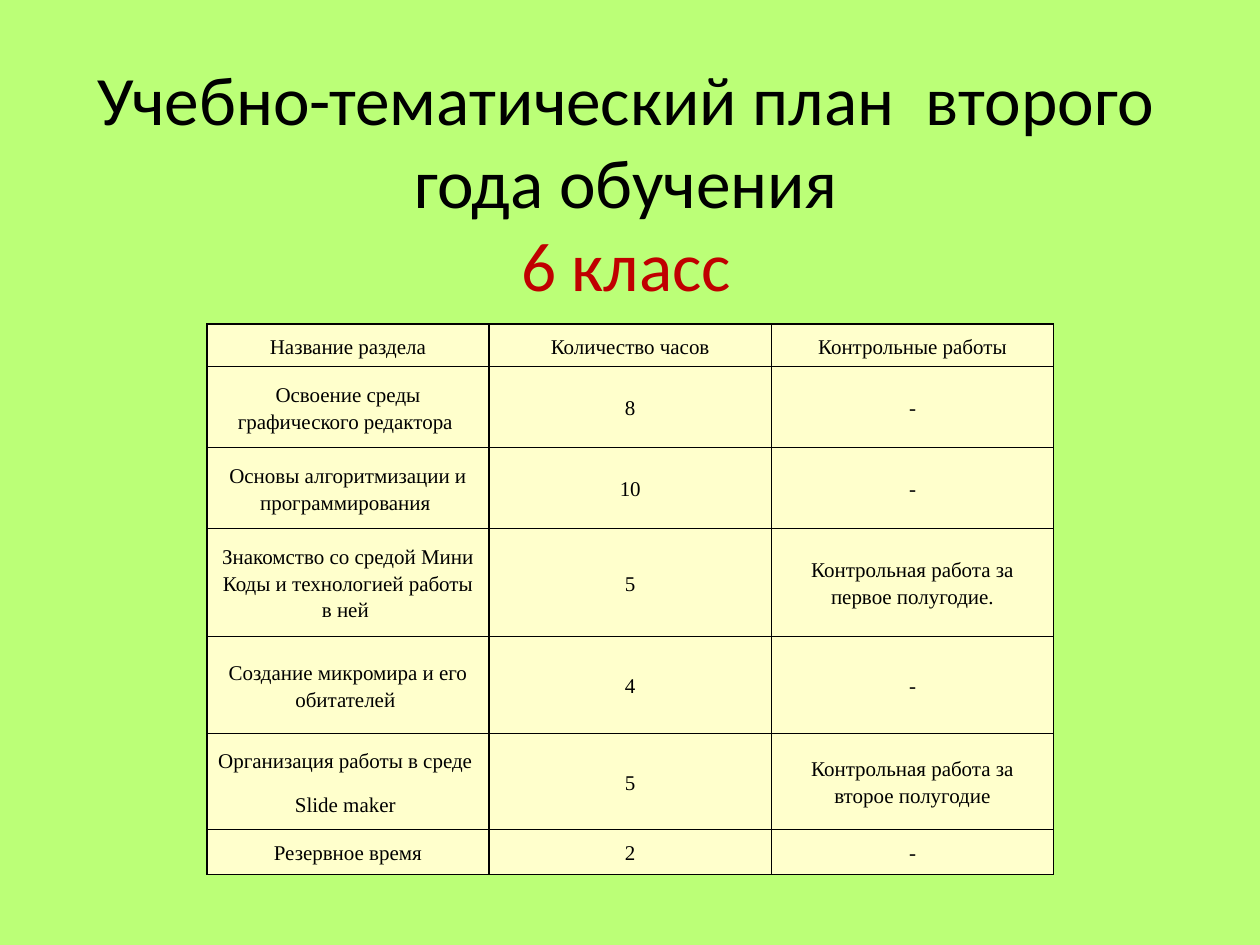
import lxml.etree
import pptx
import pptx.dml.color
import pptx.enum.text
import pptx.oxml.ns
import pptx.util

Cm = pptx.util.Cm
Pt = pptx.util.Pt
RGBColor = pptx.dml.color.RGBColor
ALIGN = pptx.enum.text.PP_ALIGN
ANCHOR = pptx.enum.text.MSO_ANCHOR
qn = pptx.oxml.ns.qn

GREEN = RGBColor(0xBB, 0xFF, 0x77)
CREAM = RGBColor(0xFF, 0xFF, 0xCC)
BLACK = RGBColor(0, 0, 0)
RED = RGBColor(0xC0, 0, 0)

TITLE_BOX = (Cm(1.19), Cm(2.77), Cm(22.86), Cm(3.18))
PLAN_BOX = (Cm(4.17), Cm(6.53), Cm(17.07), Cm(11.12))
ROW_HEIGHTS = [Cm(h) for h in (0.86, 1.63, 1.63, 2.18, 1.96, 1.93, 0.91)]

PLAN = [
    ("Название раздела", "Количество часов", "Контрольные работы"),
    ("Освоение среды графического редактора ", "8", "-"),
    ("Основы алгоритмизации и программирования ", "10", "-"),
    ("Знакомство со средой Мини Коды и технологией работы в ней ", "5",
     "Контрольная работа за первое полугодие."),
    ("Создание микромира и его обитателей ", "4", "-"),
    ("Организация работы в среде \nSlide maker ", "5",
     "Контрольная работа за второе полугодие"),
    ("Резервное время", "2", "-"),
]


def place_title(page, box):
    title = page.shapes.title
    title.left, title.top, title.width, title.height = box
    frame = title.text_frame
    frame.word_wrap = True
    frame.auto_size = pptx.enum.text.MSO_AUTO_SIZE.NONE
    frame.vertical_anchor = ANCHOR.MIDDLE
    frame.margin_bottom = Cm(1.55)  # lifts the centred lines clear of the table
    frame.text = "Учебно-тематический план  второго года обучения\v6 класс"
    para = frame.paragraphs[0]
    para.alignment = ALIGN.CENTER
    for span, color in zip(para.runs, (BLACK, RED)):
        span.font.name = "Calibri"
        span.font.size = Pt(39.6)
        span.font.color.rgb = color


def draw_borders(cell, color, width):
    properties = cell._tc.get_or_add_tcPr()
    for side in ("a:lnL", "a:lnR", "a:lnT", "a:lnB"):
        line = lxml.etree.SubElement(properties, qn(side), w=str(width))
        fill = lxml.etree.SubElement(line, qn("a:solidFill"))
        lxml.etree.SubElement(fill, qn("a:srgbClr"), val=str(color))


def fill_cell(cell, text):
    draw_borders(cell, BLACK, Pt(1))
    cell.fill.solid()
    cell.fill.fore_color.rgb = CREAM
    cell.vertical_anchor = ANCHOR.MIDDLE
    cell.margin_left = cell.margin_right = Cm(0.18)
    cell.margin_top = cell.margin_bottom = 0
    cell.text_frame.text = text
    for para in cell.text_frame.paragraphs:
        para.alignment = ALIGN.CENTER
        para.line_spacing = 1.15
        para.space_after = Pt(10)
        for span in para.runs:
            span.font.name = "Times New Roman"
            span.font.size = Pt(12)
            span.font.bold = False
            span.font.color.rgb = BLACK


def place_plan(page, box):
    table = page.shapes.add_table(len(PLAN), len(PLAN[0]), *box).table
    for row, height, texts in zip(table.rows, ROW_HEIGHTS, PLAN):
        row.height = height
        for cell, text in zip(row.cells, texts):
            fill_cell(cell, text)


def main():
    deck = pptx.Presentation()
    deck.slide_width, deck.slide_height = Cm(25.4), Cm(19.05)
    page = deck.slides.add_slide(deck.slide_layouts.get_by_name("Title Only"))
    page.background.fill.solid()
    page.background.fill.fore_color.rgb = GREEN
    place_title(page, TITLE_BOX)
    place_plan(page, PLAN_BOX)
    deck.save("out.pptx")


if __name__ == "__main__":
    main()
